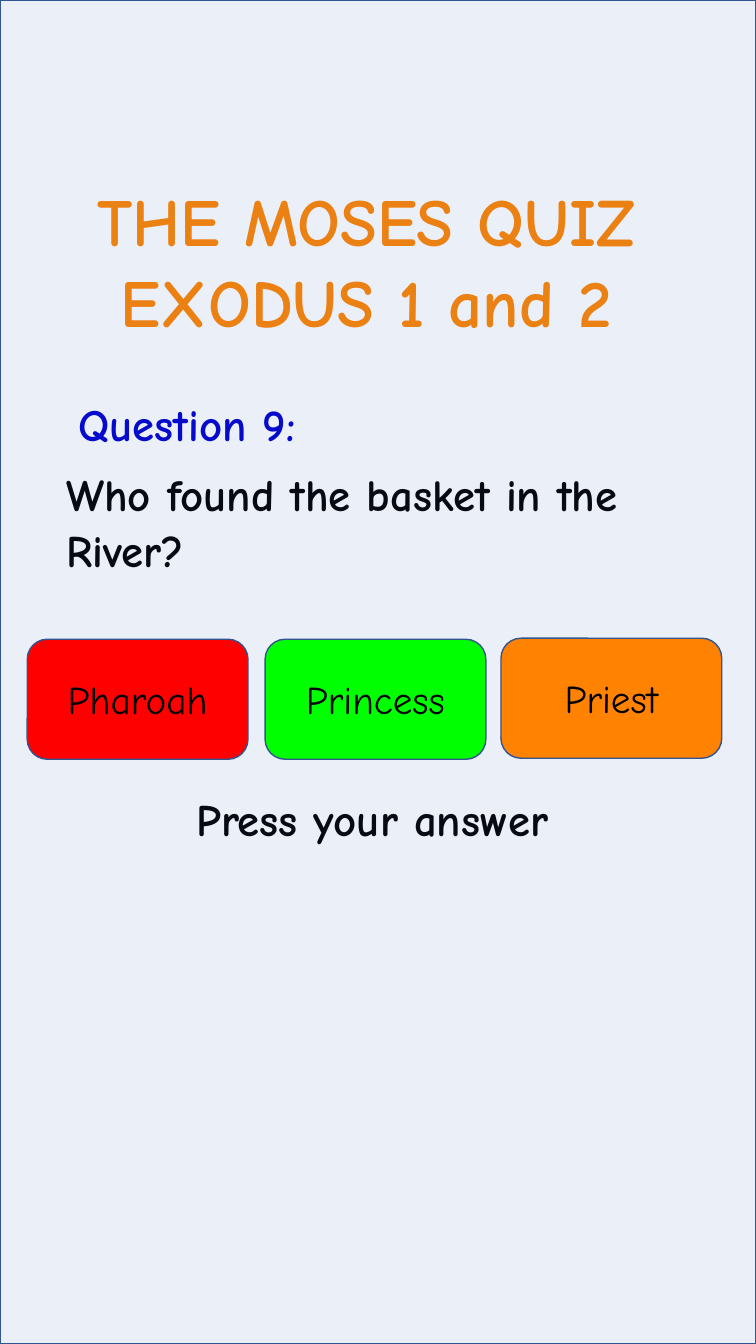
from lxml.etree import SubElement
from pptx import Presentation
from pptx.dml.color import RGBColor
from pptx.enum.shapes import MSO_SHAPE as Shape
from pptx.enum.text import MSO_ANCHOR as Anchor, MSO_AUTO_SIZE as AutoSize, PP_ALIGN as Align
from pptx.oxml.ns import qn
from pptx.util import Inches, Pt

FONT = "Comic Neue"
COLORS = {
    "panel": "4472C4",
    "outline": "325491",
    "title": "FF8200",
    "label": "0000CC",
    "text": "000000",
    "red": "FF0000",
    "green": "00FF00",
    "orange": "FF8200",
}
ANSWERS = [
    ("Pharoah", "red", 0.27, 6.34),
    ("Princess", "green", 2.63, 6.34),
    ("Priest", "orange", 4.97, 6.33),
]


def color(name):
    return RGBColor.from_string(COLORS[name])


def write(shape, lines, size, color_name, bold=True, align=Align.LEFT,
          anchor=Anchor.TOP, spacing=None, before=0):
    frame = shape.text_frame
    frame.text = "\n".join(lines)
    frame.word_wrap = True
    frame.auto_size = AutoSize.NONE
    frame.vertical_anchor = anchor
    for paragraph in frame.paragraphs:
        paragraph.alignment = align
        paragraph.space_before = Pt(before)
        if spacing:
            paragraph.line_spacing = spacing
        paragraph.font.name = FONT
        paragraph.font.size = Pt(size)
        paragraph.font.bold = bold
        paragraph.font.color.rgb = color(color_name)


def add_title(slide, left, top, width, height):
    title = slide.shapes.title
    title.left, title.top = Inches(left), Inches(top)
    title.width, title.height = Inches(width), Inches(height)
    write(title, ["THE MOSES QUIZ", "EXODUS 1 and 2"], 48, "title", align=Align.CENTER)


def add_text(slide, box, text, color_name="text", **style):
    textbox = slide.shapes.add_textbox(*map(Inches, box))
    write(textbox, [text], 32, color_name, **style)


def add_question(slide, left, top):
    add_text(slide, (left, top, 2.77, 0.64), "Question 9:", "label", align=Align.CENTER)
    add_text(slide, (left + 0.09, top + 0.67, 6.36, 1.46),
             "Who found the basket in the River?", spacing=Pt(40), before=7.5)


def add_outlined_shape(slide, kind, box, fill):
    shape = slide.shapes.add_shape(kind, *map(Inches, box))
    shape.shadow.inherit = False
    shape.fill.solid()
    shape.fill.fore_color.rgb = color(fill)
    shape.line.color.rgb = color("outline")
    shape.line.width = Pt(1)
    return shape


def add_panel(slide, width, height):
    panel = add_outlined_shape(slide, Shape.RECTANGLE, (0, 0, width, height), "panel")
    fill_color = panel.fill._xPr.find(qn("a:solidFill"))[0]
    SubElement(fill_color, qn("a:alpha"), val="10000")


def add_answers(slide, width, height):
    for answer, fill, left, top in ANSWERS:
        button = add_outlined_shape(slide, Shape.ROUNDED_RECTANGLE,
                                    (left, top, width, height), fill)
        write(button, [answer], 28, "text", bold=False,
              align=Align.CENTER, anchor=Anchor.MIDDLE)


def main():
    presentation = Presentation()
    presentation.slide_width, presentation.slide_height = Inches(7.5), Inches(13.33)
    slide = presentation.slides.add_slide(presentation.slide_layouts[5])
    add_title(slide, 0.19, 1.73, 6.89, 1.72)
    add_question(slide, 0.47, 3.89)
    add_text(slide, (1.85, 7.86, 4.22, 0.72), "Press your answer", spacing=0.9, before=7.5)
    add_panel(slide, 7.5, 13.33)
    add_answers(slide, 2.19, 1.19)
    presentation.save("out.pptx")


if __name__ == "__main__":
    main()
